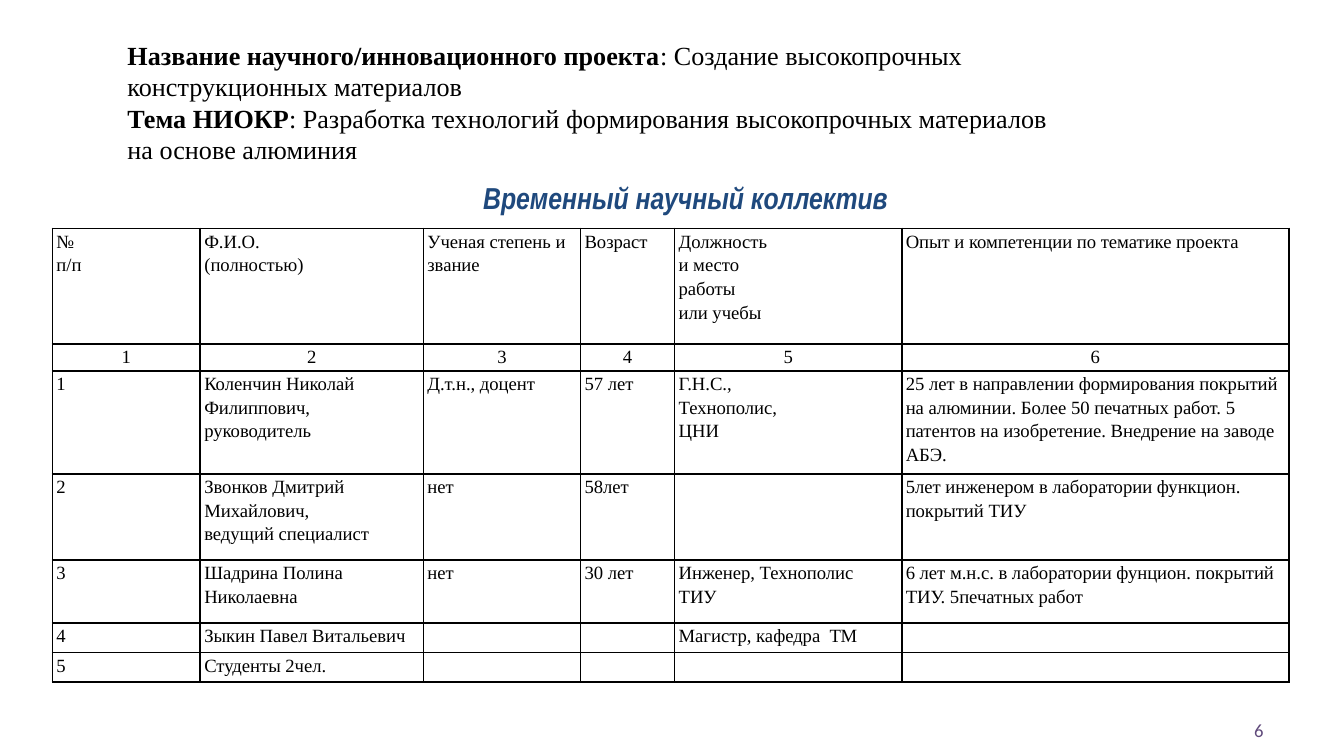
from lxml.etree import SubElement
from pptx import Presentation
from pptx.dml.color import RGBColor
from pptx.enum.text import MSO_ANCHOR, MSO_AUTO_SIZE, PP_ALIGN
from pptx.oxml.ns import qn
from pptx.util import Inches, Pt

COLORS = {"text": "000000", "title": "1F497D", "number": "604A7B"}
SERIF = "Times New Roman"


def style(font, name, size, color, bold=False, italic=False):
    font.name, font.size = name, Pt(size)
    font.bold, font.italic = bold, italic
    font.color.rgb = RGBColor.from_string(COLORS[color])


def add_borders(cell):
    properties = cell._tc.get_or_add_tcPr()
    for side in ("lnL", "lnR", "lnT", "lnB"):
        line = SubElement(properties, qn(f"a:{side}"), w=str(Pt(1)))
        fill = SubElement(line, qn("a:solidFill"))
        SubElement(fill, qn("a:srgbClr"), val=COLORS["text"])


deck = Presentation()
deck.slide_width = Inches(10)
deck.slide_height = deck.slide_width * 9 // 16
slide = deck.slides.add_slide(deck.slide_layouts[5])

# Title
title = slide.shapes.title
title.left, title.top = Inches(1.06), Inches(1.27)
title.width, title.height = Inches(8.08), Inches(0.4)
frame = title.text_frame
frame.text = "Временный научный коллектив"
frame.auto_size = MSO_AUTO_SIZE.NONE
frame.vertical_anchor = MSO_ANCHOR.MIDDLE
frame.paragraphs[0].alignment = PP_ALIGN.CENTER
style(frame.paragraphs[0].runs[0].font, "Arial Narrow", 16.2, "title", True, True)

# Project and research topic
project = [
    ("Название научного/инновационного проекта",
     ": Создание высокопрочных конструкционных материалов"),
    ("Тема НИОКР",
     ": Разработка технологий формирования высокопрочных материалов на основе алюминия"),
]
box = slide.shapes.add_textbox(Inches(0.85), Inches(0.24), Inches(7.21), Inches(1.04))
frame = box.text_frame
frame.word_wrap = True
frame.vertical_anchor = MSO_ANCHOR.MIDDLE
for index, (label, value) in enumerate(project):
    para = frame.add_paragraph() if index else frame.paragraphs[0]
    for text, bold in ((label, True), (value, False)):
        span = para.add_run()
        span.text = text
        style(span.font, SERIF, 14, "text", bold)

# Team table
column_widths = [1.1, 1.66, 1.17, 0.7, 1.69, 2.88]
row_heights = [0.86, 0.2, 0.7, 0.64, 0.47, 0.22, 0.22]
team = [
    ["№\nп/п", "Ф.И.О.\n(полностью)", "Ученая степень и\nзвание", "Возраст",
     "Должность\nи место\nработы\nили учебы", "Опыт и компетенции по тематике проекта"],
    ["1", "2", "3", "4", "5", "6"],
    ["1", "Коленчин Николай Филиппович,\nруководитель", "Д.т.н., доцент", "57 лет",
     "Г.Н.С.,\nТехнополис,\nЦНИ",
     "25 лет в направлении формирования покрытий на алюминии. Более 50 печатных работ. "
     "5 патентов на изобретение. Внедрение на заводе АБЭ."],
    ["2", "Звонков Дмитрий Михайлович,\nведущий специалист", "нет", "58лет", "",
     "5лет инженером в лаборатории функцион. покрытий ТИУ"],
    ["3", "Шадрина Полина Николаевна", "нет", "30 лет", "Инженер, Технополис\nТИУ",
     "6 лет м.н.с. в лаборатории фунцион. покрытий ТИУ. 5печатных работ"],
    ["4", "Зыкин Павел Витальевич", "", "", "Магистр, кафедра  ТМ", ""],
    ["5", "Студенты 2чел.", "", "", "", ""],
]
table = slide.shapes.add_table(
    len(row_heights), len(column_widths), Inches(0.39), Inches(1.7),
    Inches(sum(column_widths)), Inches(sum(row_heights))).table
table.first_row = table.horz_banding = False
for column, width in zip(table.columns, column_widths):
    column.width = Inches(width)
for row, height in zip(table.rows, row_heights):
    row.height = Inches(height)

for row_index, texts in enumerate(team):
    for column_index, text in enumerate(texts):
        cell = table.cell(row_index, column_index)
        cell.margin_left = cell.margin_right = Inches(0.03)
        cell.margin_top = cell.margin_bottom = 0
        add_borders(cell)
        cell.fill.background()
        cell.text_frame.text = text
        for para in cell.text_frame.paragraphs:
            para.line_spacing = 1.15
            if row_index == 1:
                para.alignment = PP_ALIGN.CENTER
            for span in para.runs:
                style(span.font, SERIF, 10, "text")
            # The end mark would otherwise stretch the row at its default size
            SubElement(para._p, qn("a:endParaRPr"), sz=str(Pt(10).centipoints))

# Slide number
number = slide.shapes.add_textbox(Inches(7.17), Inches(5.28), Inches(2.33), Inches(0.3))
frame = number.text_frame
frame.text = "6"
frame.word_wrap = True
frame.vertical_anchor = MSO_ANCHOR.MIDDLE
frame.paragraphs[0].alignment = PP_ALIGN.RIGHT
style(frame.paragraphs[0].runs[0].font, "Calibri", 10, "number")

deck.save("out.pptx")
